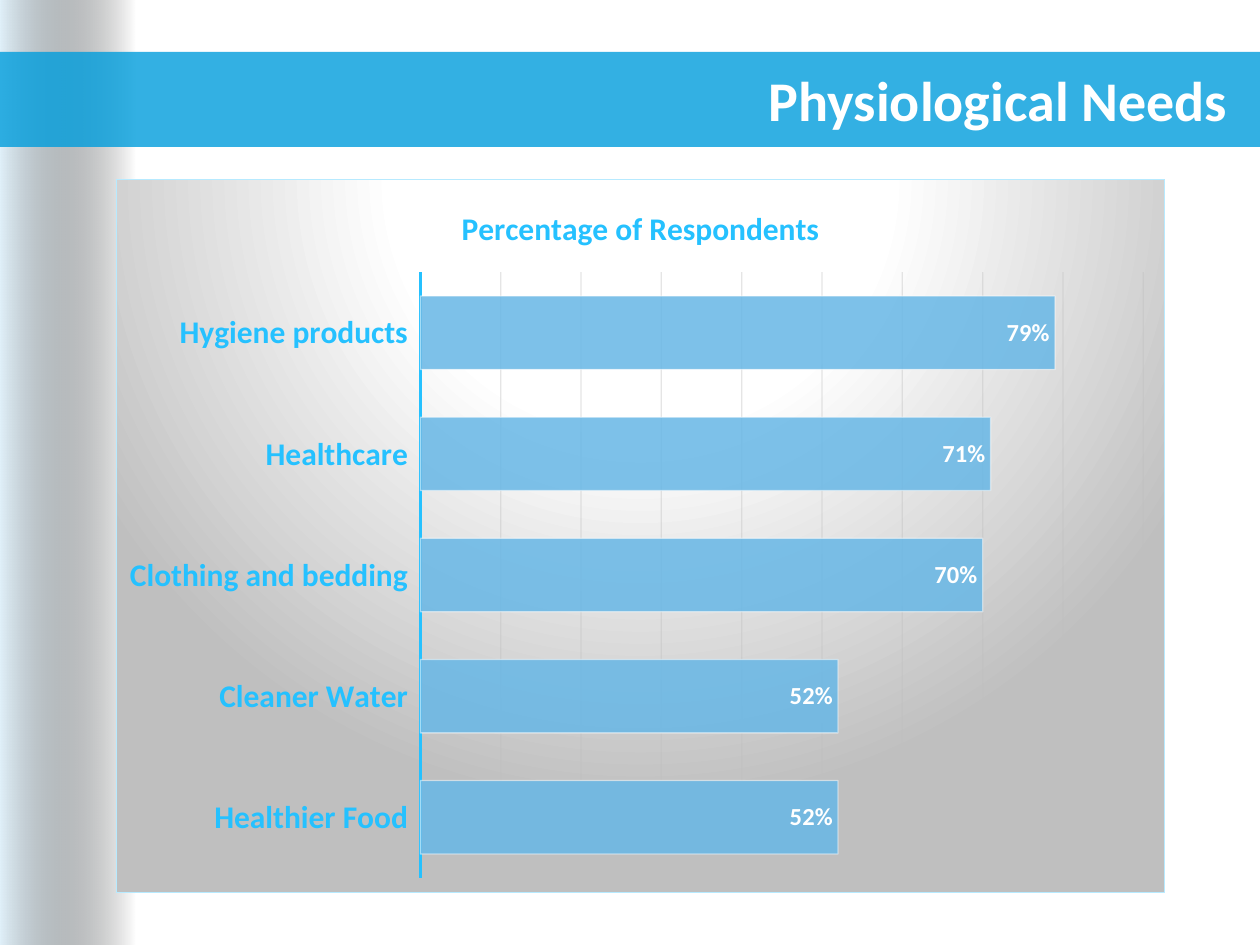
"""Builds the Physiological Needs slide with its bar chart of respondents."""
from pptx import Presentation
from pptx.chart.data import CategoryChartData
from pptx.dml.color import RGBColor
from pptx.enum.chart import XL_CHART_TYPE, XL_LABEL_POSITION, XL_TICK_LABEL_POSITION, XL_TICK_MARK
from pptx.enum.shapes import MSO_SHAPE
from pptx.enum.text import MSO_ANCHOR, PP_ALIGN
from pptx.oxml import parse_xml
from pptx.oxml.ns import nsdecls
from pptx.util import Emu, Pt

COLORS = {
    "strip": "E1F1FA", "clear": "000000", "band": "009DDC", "text": "FFFFFF",
    "accent": "25C1FF", "bar": "67B7E6", "grid": "BFBFBF", "border": "B7EAFF",
    "panel": "FFFFFF", "panel_edge": "BFBFBF",
}
FONT = "Calibri"
TITLE = "Percentage of Respondents"
NEEDS = {
    "Healthier Food": 0.52,
    "Cleaner Water": 0.52,
    "Clothing and bedding": 0.7,
    "Healthcare": 0.71,
    "Hygiene products": 0.79,
}
PLOT_LAYOUT = {"x": 0.29, "y": 0.13, "w": 0.69, "h": 0.85}


def px(*lengths):
    return [Emu(round(length * 914400 / 126)) for length in lengths]


def color(name):
    return RGBColor.from_string(COLORS[name])


def style_font(font, size, name):
    font.name, font.size, font.bold = FONT, Pt(size), True
    font.color.rgb = color(name)


def style_line(line, name, width):
    line.color.rgb = color(name)
    line.width = Pt(width)


def fade(element, query, percent):
    for tint in element.xpath(query):
        tint.append(parse_xml(f'<a:alpha {nsdecls("a")} val="{percent * 1000}"/>'))


def add_rectangle(page, *bounds):
    shape = page.shapes.add_shape(MSO_SHAPE.RECTANGLE, *px(*bounds))
    shape.shadow.inherit = False
    shape.line.fill.background()
    return shape


def add_strip(page):
    strip = add_rectangle(page, 0, 0, 136, 945)
    strip.fill.gradient()
    strip.fill.gradient_angle = 0
    for stop, name in zip(strip.fill.gradient_stops, ("strip", "clear")):
        stop.color.rgb = color(name)
    fade(strip._element, "p:spPr/a:gradFill/a:gsLst/a:gs[2]/a:srgbClr", 0)


def add_band(page, left, width):
    band = add_rectangle(page, left, 52, width, 95)
    band.fill.solid()
    band.fill.fore_color.rgb = color("band")
    fade(band._element, "p:spPr/a:solidFill/a:srgbClr", 80)


def add_title(page, text):
    box = page.shapes.add_textbox(*px(319, 58, 921, 82))
    frame = box.text_frame
    frame.word_wrap = True
    frame.vertical_anchor = MSO_ANCHOR.MIDDLE
    frame.text = text
    paragraph = frame.paragraphs[0]
    paragraph.alignment = PP_ALIGN.RIGHT
    style_font(paragraph.runs[0].font, 32, "text")


def style_panel(chart):
    stops = "".join(
        f'<a:gs pos="{position * 1000}"><a:srgbClr val="{COLORS[name]}"/></a:gs>'
        for position, name in ((0, "panel"), (39, "panel"), (100, "panel_edge"))
    )
    panel = parse_xml(
        f'<c:spPr {nsdecls("c", "a")}><a:gradFill><a:gsLst>{stops}</a:gsLst>'
        '<a:path path="circle"><a:fillToRect l="50000" t="-80000" r="50000" b="180000"/></a:path>'
        f'</a:gradFill><a:ln w="{Pt(0.75)}"><a:solidFill><a:srgbClr val="{COLORS["border"]}"/>'
        '</a:solidFill></a:ln></c:spPr>'
    )
    chart._chartSpace.xpath("c:txPr")[0].addprevious(panel)


def place_plot(chart):
    area = chart._chartSpace.xpath("c:chart/c:plotArea")[0]
    for layout in area.xpath("c:layout"):
        area.remove(layout)
    modes = '<c:xMode val="edge"/><c:yMode val="edge"/>'
    sizes = "".join(f'<c:{side} val="{share}"/>' for side, share in PLOT_LAYOUT.items())
    area.insert(0, parse_xml(
        f'<c:layout {nsdecls("c")}><c:manualLayout><c:layoutTarget val="inner"/>'
        f'{modes}{sizes}</c:manualLayout></c:layout>'
    ))


def style_axes(chart):
    categories, values = chart.category_axis, chart.value_axis
    categories.major_tick_mark = categories.minor_tick_mark = XL_TICK_MARK.NONE
    categories.tick_label_position = XL_TICK_LABEL_POSITION.LOW
    categories.has_major_gridlines = False
    style_font(categories.tick_labels.font, 18, "accent")
    style_line(categories.format.line, "accent", 1.5)
    values.minimum_scale, values.maximum_scale, values.major_unit = 0, 0.9, 0.1
    values.visible = False
    values.has_major_gridlines = True
    style_line(values.major_gridlines.format.line, "grid", 0.75)
    fade(chart._chartSpace, ".//c:majorGridlines//a:srgbClr", 40)


def style_bars(plot):
    plot.gap_width = 65
    plot.vary_by_categories = False
    series = plot.series[0]
    series.format.fill.solid()
    series.format.fill.fore_color.rgb = color("bar")
    style_line(series.format.line, "text", 0.75)
    fade(series._element, "c:spPr/a:solidFill/a:srgbClr", 85)
    fade(series._element, "c:spPr/a:ln/a:solidFill/a:srgbClr", 50)
    labels = series.data_labels
    labels.show_value = True
    labels.number_format, labels.number_format_is_linked = "0%", False
    labels.position = XL_LABEL_POSITION.INSIDE_END
    style_font(labels.font, 14, "text")


def add_needs_chart(page):
    data = CategoryChartData(number_format="0%")
    data.categories = list(NEEDS)
    data.add_series(TITLE, list(NEEDS.values()))
    frame = page.shapes.add_chart(XL_CHART_TYPE.BAR_CLUSTERED, *px(116, 179, 1049, 714), data)
    chart = frame.chart
    chart.has_legend = False
    chart.font.name, chart.font.size = FONT, Pt(10)
    chart.font.color.rgb = color("band")
    chart.has_title = True
    chart.chart_title.include_in_layout = False
    chart.chart_title.text_frame.text = TITLE
    style_font(chart.chart_title.text_frame.paragraphs[0].runs[0].font, 18, "accent")
    style_axes(chart)
    style_bars(chart.plots[0])
    place_plot(chart)
    style_panel(chart)


def main():
    deck = Presentation()
    deck.slide_width, deck.slide_height = px(1260, 945)
    page = deck.slides.add_slide(deck.slide_layouts[6])
    add_strip(page)
    add_band(page, 535, 725)
    add_band(page, 0, 535)
    add_title(page, "Physiological Needs")
    add_needs_chart(page)
    deck.save("out.pptx")


if __name__ == "__main__":
    main()
